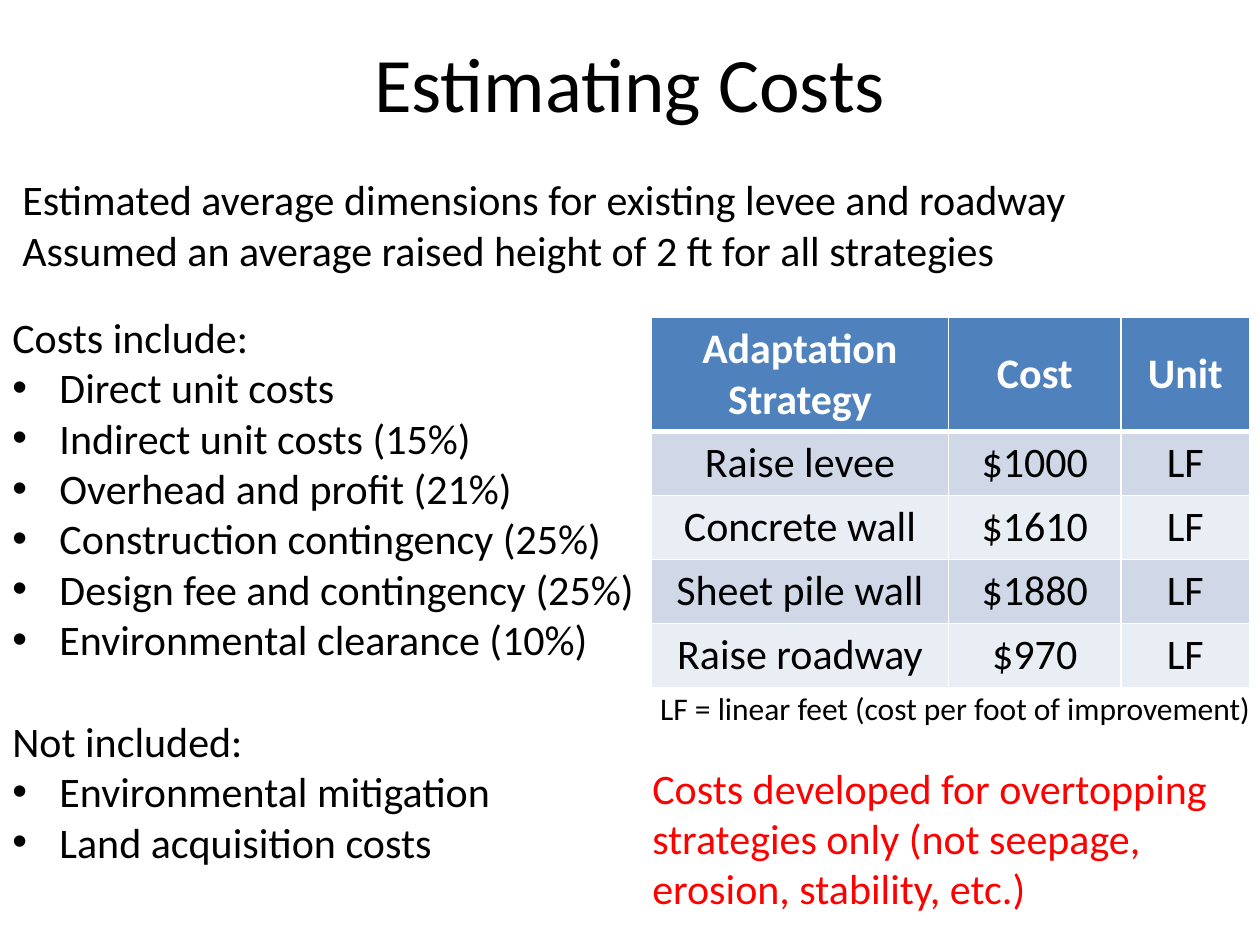
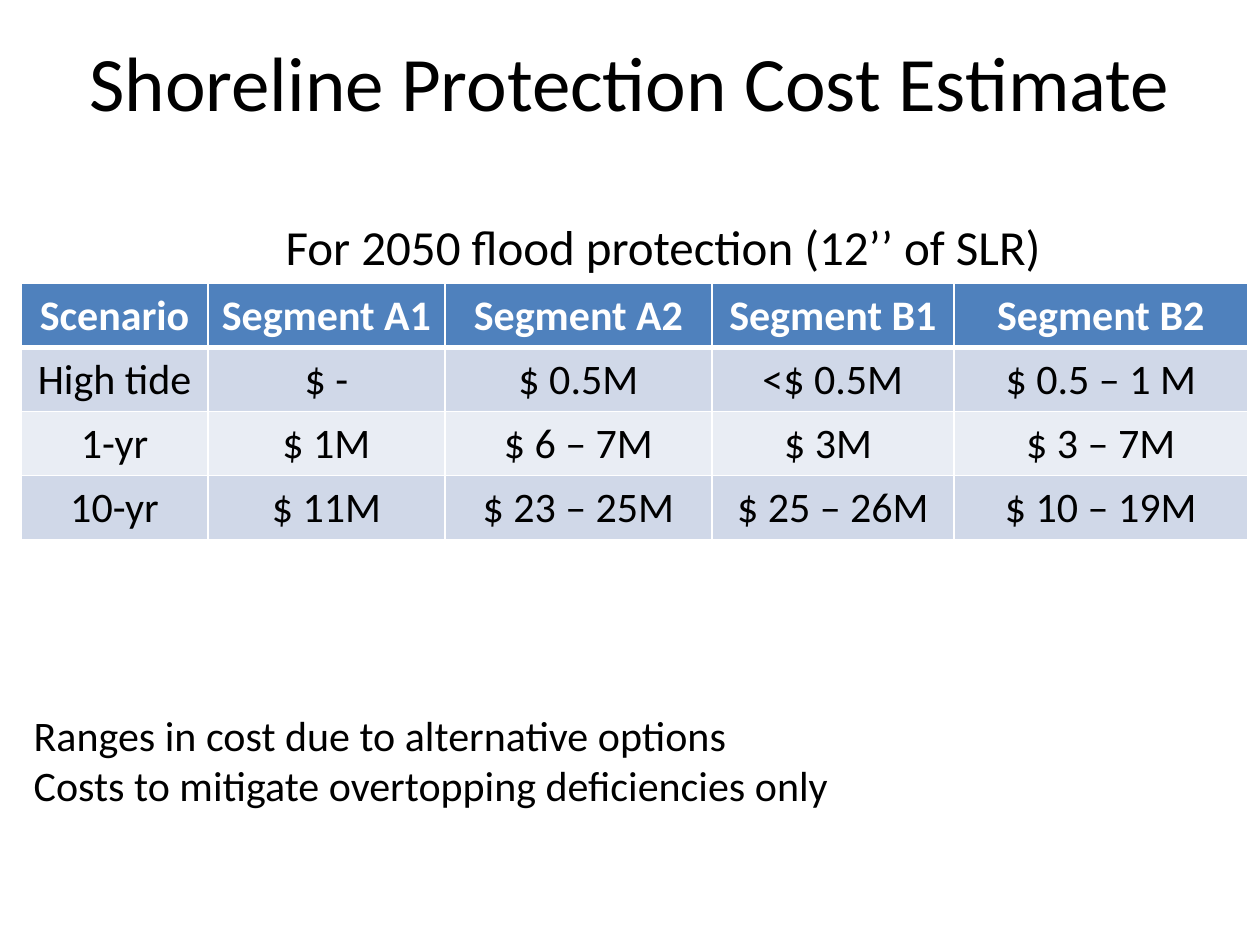
from dataclasses import dataclass

from lxml import etree
from pptx import Presentation
from pptx import util as u
from pptx.dml.color import RGBColor
from pptx.enum import text as t
from pptx.oxml import ns

FONT = "Calibri"
BODY = 24
HUES = {
    "ink": "000000",
    "paper": "FFFFFF",
    "alert": "FF0000",
    "head": "4F81BD",
    "odd": "D0D8E8",
    "even": "E9EDF4",
}
HEAD_LINE, GRID_LINE = 3, 1
ROW = 1.29


@dataclass
class Line:
    text: str
    bullet: bool = False
    gap: float = 0


@dataclass
class Note:
    left: float
    top: float
    width: float
    height: float
    lines: list[Line]
    size: int = BODY
    hue: str = "ink"


@dataclass
class Grid:
    left: float
    top: float
    head: float
    cols: list[float]
    rows: list[list[str]]


@dataclass
class Page:
    title: str
    top: float
    grid: Grid
    notes: list[Note]


def color(name: str) -> RGBColor:
    return RGBColor.from_string(HUES[name])


def style(para, size: int, hue: str, bold: bool = False) -> None:
    font = para.font
    font.name = FONT
    font.size = u.Pt(size)
    font.bold = bold
    font.color.rgb = color(hue)


def add_bullet(para) -> None:
    props = para._p.get_or_add_pPr()
    dent = u.Cm(0.95)
    props.set("marL", str(dent))
    props.set("indent", str(-dent))
    etree.SubElement(props, ns.qn("a:buFont")).set("typeface", "Arial")
    etree.SubElement(props, ns.qn("a:buChar")).set("char", "•")


def add_note(slide, note: Note):
    place = (note.left, note.top, note.width, note.height)
    frame = slide.shapes.add_textbox(*map(u.Cm, place)).text_frame
    frame.word_wrap = True
    for i, line in enumerate(note.lines):
        para = frame.add_paragraph() if i else frame.paragraphs[0]
        para.text = line.text
        if line.gap:
            para.space_before = u.Pt(line.gap)
        if line.bullet:
            add_bullet(para)
        style(para, note.size, note.hue)
    return frame


def add_title(slide, title: str, top: float) -> None:
    frame = add_note(slide, Note(1.27, top, 22.86, 3.18, [Line(title)], 44))
    frame.vertical_anchor = t.MSO_ANCHOR.MIDDLE
    frame.paragraphs[0].alignment = t.PP_ALIGN.CENTER


def add_edge(cell, side: str, width: float) -> None:
    props = cell._tc.get_or_add_tcPr()
    edge = etree.SubElement(props, ns.qn(f"a:ln{side}"), w=str(u.Pt(width)))
    fill = etree.SubElement(edge, ns.qn("a:solidFill"))
    etree.SubElement(fill, ns.qn("a:srgbClr"), val=HUES["paper"])


def fill_cell(cell, value: str, row: int) -> None:
    edges = {
        "L": GRID_LINE,
        "R": GRID_LINE,
        "T": HEAD_LINE if row == 1 else GRID_LINE,
        "B": HEAD_LINE if row == 0 else GRID_LINE,
    }
    for side, width in edges.items():
        add_edge(cell, side, width)
    is_head = row == 0
    band = "head" if is_head else "odd" if row % 2 else "even"
    cell.fill.solid()
    cell.fill.fore_color.rgb = color(band)
    cell.vertical_anchor = t.MSO_ANCHOR.MIDDLE
    para = cell.text_frame.paragraphs[0]
    para.text = value
    para.alignment = t.PP_ALIGN.CENTER
    style(para, BODY, "paper" if is_head else "ink", is_head)


def add_grid(slide, grid: Grid) -> None:
    highs = [grid.head] + [ROW] * (len(grid.rows) - 1)
    place = (grid.left, grid.top, sum(grid.cols), sum(highs))
    table = slide.shapes.add_table(
        len(highs), len(grid.cols), *map(u.Cm, place)
    ).table
    for col, width in zip(table.columns, grid.cols):
        col.width = u.Cm(width)
    for r, (row, high) in enumerate(zip(table.rows, highs)):
        row.height = u.Cm(high)
        for cell, value in zip(row.cells, grid.rows[r]):
            fill_cell(cell, value, r)


PAGES = [
    Page(
        "Estimating Costs",
        0.05,
        Grid(13.13, 6.4, 2.3, [5.99, 3.48, 2.59], [
            ["Adaptation Strategy", "Cost", "Unit"],
            ["Raise levee", "$1000", "LF"],
            ["Concrete wall", "$1610", "LF"],
            ["Sheet pile wall", "$1880", "LF"],
            ["Raise roadway", "$970", "LF"],
        ]),
        [
            Note(0.2, 3.38, 26.24, 3.33, [
                Line("Estimated average dimensions for existing levee and roadway"),
                Line("Assumed an average raised height of 2 ft for all strategies"),
            ]),
            Note(0, 6.15, 13.34, 11.53, [
                Line("Costs include:"),
                Line("Direct unit costs", True),
                Line("Indirect unit costs (15%)", True),
                Line("Overhead and profit (21%)", True),
                Line("Construction contingency (25%)", True),
                Line("Design fee and contingency (25%)", True),
                Line("Environmental clearance (10%)", True),
                Line("Not included:", gap=29.3),
                Line("Environmental mitigation", True),
                Line("Land acquisition costs", True),
            ]),
            Note(12.9, 15.24, 12.5, 3.33, [
                Line("Costs developed for overtopping strategies only "
                     "(not seepage, erosion, stability, etc.)"),
            ], hue="alert"),
            Note(13.06, 13.77, 12.55, 1.02, [
                Line("LF = linear feet (cost per foot of improvement)"),
            ], 18),
        ],
    ),
    Page(
        "Shoreline Protection Cost Estimate",
        0.03,
        Grid(0.43, 5.72, ROW, [3.76, 4.78, 5.38, 4.88, 5.92], [
            ["Scenario", "Segment A1", "Segment A2", "Segment B1", "Segment B2"],
            ["High tide", "$ -", "$ 0.5M", "<$ 0.5M", "$ 0.5 – 1 M"],
            ["1-yr", "$ 1M", "$ 6 – 7M", "$ 3M ", "$ 3 – 7M"],
            ["10-yr", "$ 11M", "$ 23 – 25M", "$ 25 – 26M", "$ 10 – 19M"],
        ]),
        [
            Note(0.43, 14.17, 18.62, 2.31, [
                Line("Ranges in cost due to alternative options"),
                Line("Costs to mitigate overtopping deficiencies only"),
            ]),
            Note(5.51, 4.24, 18.34, 1.45, [
                Line("For 2050 flood protection (12’’ of SLR)"),
            ], 28),
        ],
    ),
]


def main() -> None:
    deck = Presentation()
    deck.slide_width, deck.slide_height = u.Cm(25.4), u.Cm(19.05)
    for page in PAGES:
        slide = deck.slides.add_slide(deck.slide_layouts[6])
        add_title(slide, page.title, page.top)
        add_grid(slide, page.grid)
        for note in page.notes:
            add_note(slide, note)
    deck.save("out.pptx")


if __name__ == "__main__":
    main()
